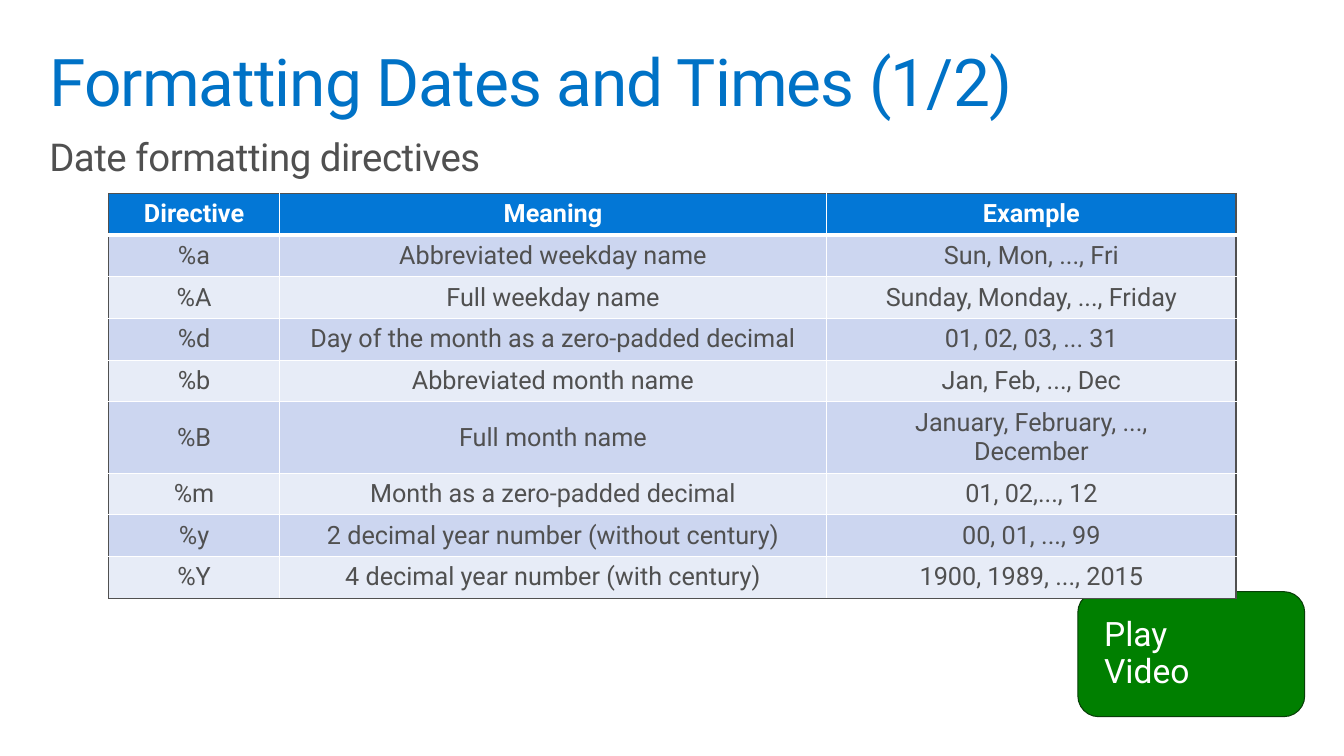
from lxml.etree import SubElement
from pptx import Presentation
from pptx.dml.color import RGBColor
from pptx.enum.shapes import MSO_SHAPE
from pptx.enum.text import MSO_ANCHOR, MSO_AUTO_SIZE, PP_ALIGN
from pptx.oxml import parse_xml
from pptx.oxml.ns import nsdecls, qn
from pptx.util import Pt

PX = 9144  # 100 px to the inch
GRAY, WHITE = "505050", "FFFFFF"


def style(p, size, color, bold=False):
    p.font.name, p.font.size, p.font.bold = "Roboto", Pt(size), bold
    p.font.color.rgb = RGBColor.from_string(color)


def write(sp, text, size, color, margins, anchor, spacing=0):
    """Fill a shape with one left-aligned paragraph; spacing is in 1/100 pt."""
    tf = sp.text_frame
    tf.word_wrap, tf.auto_size, tf.vertical_anchor = True, MSO_AUTO_SIZE.NONE, anchor
    tf.margin_left = tf.margin_right = margins[0] * PX
    tf.margin_top = tf.margin_bottom = margins[1] * PX
    p = tf.paragraphs[0]
    p.text, p.alignment, p.line_spacing = text, PP_ALIGN.LEFT, 0.9
    style(p, size, color)
    for r in p.runs:
        r.font._element.set("spc", str(spacing))


prs = Presentation()
prs.slide_width, prs.slide_height = 1333 * PX, 750 * PX
s = prs.slides.add_slide(prs.slide_layouts[5])

title = s.shapes.title
title.left, title.top, title.width, title.height = [v * PX for v in (39, 39, 1255, 88)]
write(title, "Formatting Dates and Times (1/2)", 47, "0072C6", (10, 10), MSO_ANCHOR.TOP, -70)

subtitle = s.shapes.add_textbox(*[v * PX for v in (39, 127, 1255, 88)])
write(subtitle, "Date formatting directives", 27.4, GRAY, (10, 10), MSO_ANCHOR.TOP, -30)

button = s.shapes.add_shape(MSO_SHAPE.ROUNDED_RECTANGLE, *[v * PX for v in (1069, 587, 225, 124)])
button.shadow.inherit = False
button.fill.solid()
button.fill.fore_color.rgb = RGBColor.from_string("007F00")
button.line.color.rgb = RGBColor.from_string("083E08")
button.line.width = Pt(0.75)
write(button, "Play \vVideo", 24, WHITE, (20, 16), MSO_ANCHOR.MIDDLE)

rows = [
    ("Directive", "Meaning", "Example"),
    ("%a", "Abbreviated weekday name", "Sun, Mon, ..., Fri"),
    ("%A", "Full weekday name", "Sunday, Monday, ..., Friday"),
    ("%d", "Day of the month as a zero-padded decimal", "01, 02, 03, ... 31"),
    ("%b", "Abbreviated month name", "Jan, Feb, ..., Dec"),
    ("%B", "Full month name", "January, February, ..., December"),
    ("%m", "Month as a zero-padded decimal", "01, 02,..., 12"),
    ("%y", "2 decimal year number (without century)", "00, 01, ..., 99"),
    ("%Y", "4 decimal year number (with century)", "1900, 1989, ..., 2015"),
]
widths = (169, 543, 406)
row_height = 41
last_row, last_col = len(rows) - 1, len(widths) - 1
table = s.shapes.add_table(len(rows), len(widths), 108 * PX, 192 * PX,
                           sum(widths) * PX, len(rows) * row_height * PX).table
table.horz_banding = False
for column, width in zip(table.columns, widths):
    column.width = width * PX

for i, row in enumerate(rows):
    header = i == 0
    fill = "0377D6" if header else ("E7ECF7", "CCD6F0")[i % 2]
    for j, text in enumerate(row):
        cell = table.cell(i, j)
        cell.vertical_anchor = MSO_ANCHOR.MIDDLE
        cell.margin_left = cell.margin_right = 30 * PX
        cell.margin_top = cell.margin_bottom = 6 * PX
        p = cell.text_frame.paragraphs[0]
        p.text, p.alignment = text, PP_ALIGN.CENTER
        style(p, 18, WHITE if header else GRAY, header)

        # Gray on the outer edge, white inside, thicker around the header's lower edge
        edges = (("lnL", j == 0, 1), ("lnR", j == last_col, 1),
                 ("lnT", header, 3 if i == 1 else 1), ("lnB", i == last_row, 3 if header else 1))
        tc_pr = cell._tc.get_or_add_tcPr()
        for tag, outer, weight in edges:
            ln = parse_xml(f'<a:{tag} {nsdecls("a")} w="{Pt(weight)}"/>')
            solid = SubElement(ln, qn("a:solidFill"))
            SubElement(solid, qn("a:srgbClr")).set("val", GRAY if outer else WHITE)
            tc_pr.append(ln)
        cell.fill.solid()
        cell.fill.fore_color.rgb = RGBColor.from_string(fill)

prs.save("out.pptx")
